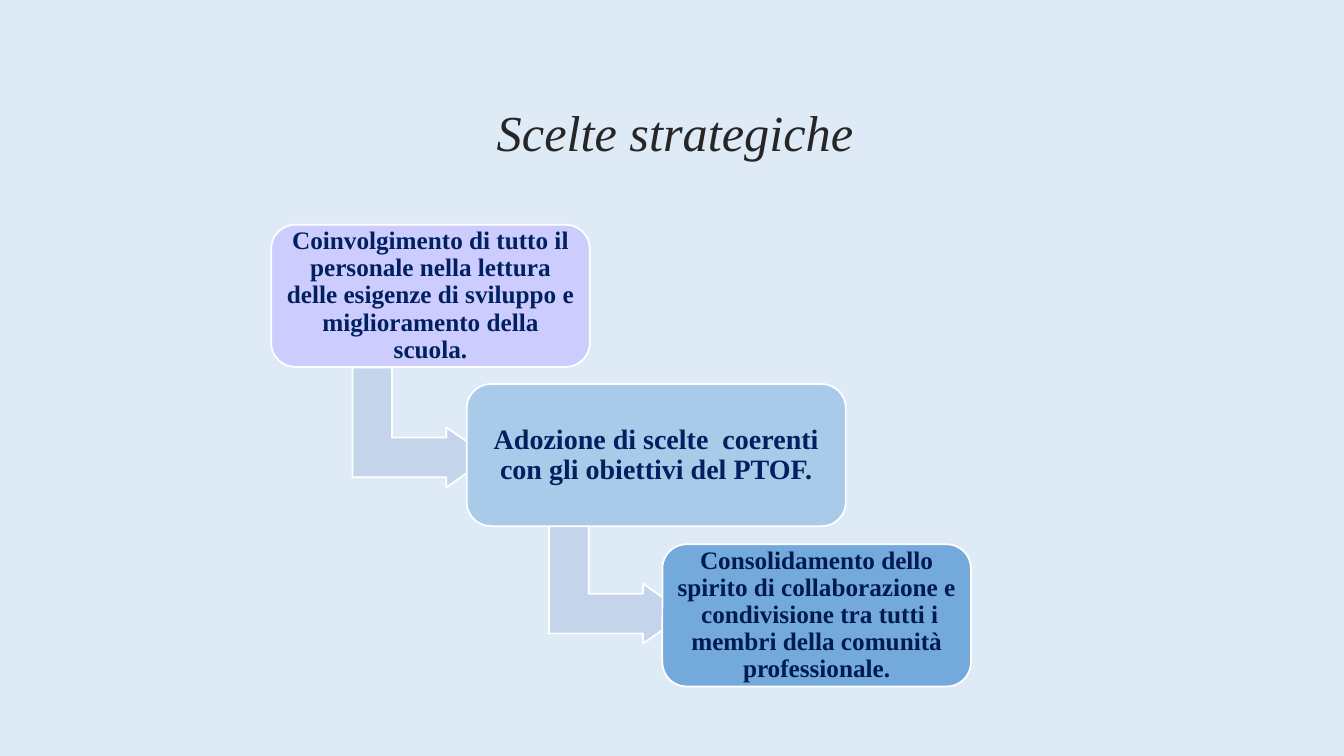
from pptx import Presentation
from pptx import util as u
from pptx.dml.color import RGBColor
from pptx.enum import shapes, text

PX = 9144  # EMU per px, 100 px to the inch
FONT = "Times New Roman"
STEP_HEIGHT = 141

# Wording, width, fill, text colour, text size, inset
STEPS = [
    ("Coinvolgimento di tutto il personale nella lettura delle esigenze "
     "di sviluppo e miglioramento della scuola.",
     316, "CCCCFF", "002060", 18, 7),
    ("Adozione di scelte  coerenti con gli obiettivi del PTOF.",
     376, "A9CBE9", "002060", 20, 8),
    ("Consolidamento dello spirito di collaborazione e  condivisione tra "
     "tutti i membri della comunità professionale.",
     306, "73A9DB", "001B50", 18, 7),
]


def px(*lengths):
    return [u.Emu(length * PX) for length in lengths]


def colour(hex_value):
    return RGBColor.from_string(hex_value)


def set_all(target, values):
    for name, value in values.items():
        setattr(target, name, value)


def write(frame, wording, ink, inset, line_spacing, font):
    margin = px(inset)[0]
    set_all(frame, {
        "word_wrap": True,
        "vertical_anchor": text.MSO_ANCHOR.MIDDLE,
        "margin_left": margin, "margin_right": margin,
        "margin_top": margin, "margin_bottom": margin,
    })
    paragraph = frame.paragraphs[0]
    set_all(paragraph, {"alignment": text.PP_ALIGN.CENTER,
                        "line_spacing": line_spacing})
    run = paragraph.add_run()
    run.text = wording
    set_all(run.font, {"name": FONT, **font})
    run.font.color.rgb = colour(ink)


def add_outlined(slide, kind, box, fill, adjustments):
    shape = slide.shapes.add_shape(kind, *px(*box))
    shape.shadow.inherit = False
    shape.fill.solid()
    shape.fill.fore_color.rgb = colour(fill)
    shape.line.color.rgb = colour("FFFFFF")
    shape.line.width = u.Pt(1.25)
    for index, value in enumerate(adjustments):
        shape.adjustments[index] = value
    return shape


def add_title(slide, wording):
    title = slide.shapes.add_textbox(*px(151, 59, 1050, 143))
    write(title.text_frame, wording, "262626", 5, 1.0,
          {"size": u.Pt(36), "italic": True})


def add_arrow(slide, index):
    box = (358 + 195 * index, 356 + 155 * index, 119, 136)
    arrow = add_outlined(slide, shapes.MSO_SHAPE.BENT_UP_ARROW, box,
                         "C4D5EB", (0.33, 0.25, 0.36))
    arrow.rotation = 90


def add_step(slide, index, wording, width, fill, ink, size, inset):
    box = (269 + 194 * index, 223 + 317 * index // 2, width, STEP_HEIGHT)
    step = add_outlined(slide, shapes.MSO_SHAPE.ROUNDED_RECTANGLE, box,
                        fill, (0.17,))
    write(step.text_frame, wording, ink, inset, 0.9,
          {"size": u.Pt(size), "bold": True})


def main():
    deck = Presentation()
    deck.slide_width, deck.slide_height = px(1333, 750)
    slide = deck.slides.add_slide(deck.slide_layouts[6])

    # Background and title
    slide.background.fill.solid()
    slide.background.fill.fore_color.rgb = colour("DEEBF7")
    add_title(slide, "Scelte strategiche ")

    # Staircase: each arrow lies behind the steps it links
    for index, step in enumerate(STEPS):
        if index < len(STEPS) - 1:
            add_arrow(slide, index)
        add_step(slide, index, *step)

    deck.save("out.pptx")


if __name__ == "__main__":
    main()
